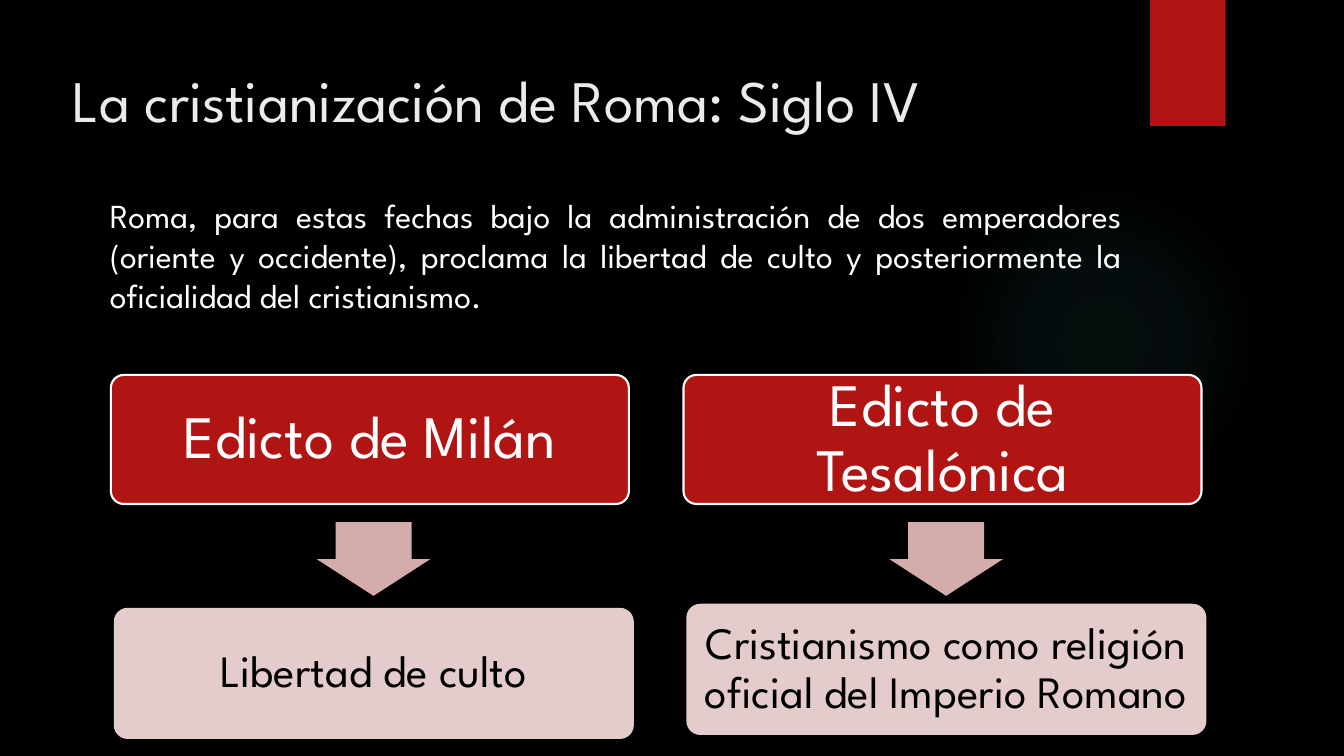
"""Builds the slide on the Christianisation of Rome in the fourth century."""
from dataclasses import dataclass

from lxml import etree
from pptx import Presentation
from pptx.dml.color import RGBColor
from pptx.enum.shapes import MSO_SHAPE
from pptx.enum.text import MSO_ANCHOR, MSO_AUTO_SIZE, PP_ALIGN
from pptx.oxml import parse_xml
from pptx.util import Pt

ROUND, RECT = MSO_SHAPE.ROUNDED_RECTANGLE, MSO_SHAPE.RECTANGLE
OVAL, ARROW = MSO_SHAPE.OVAL, MSO_SHAPE.RIGHT_ARROW
LEFT, CENTER, JUSTIFY = PP_ALIGN.LEFT, PP_ALIGN.CENTER, PP_ALIGN.JUSTIFY
TOP, MIDDLE = MSO_ANCHOR.TOP, MSO_ANCHOR.MIDDLE
NO_FIT = MSO_AUTO_SIZE.NONE

NS = "http://schemas.openxmlformats.org/drawingml/2006/main"
FONT = "League Spartan"
RED, WHITE, BLACK, PINK = "B01513", "FFFFFF", "000000", "E4CCCC"
GLOW_STOPS = ((0, 7), (36, 6), (69, 0))
COLUMN_PITCH = 409


@dataclass
class Style:
    size: float
    color: str
    align: PP_ALIGN
    anchor: MSO_ANCHOR = TOP
    inset_x: float = 7.2
    inset_y: float = 3.6
    spacing: float = 1.0


@dataclass
class Box:
    text: str
    x: float
    y: float
    fill: str
    line: str
    style: Style


EDICT = Style(43, WHITE, CENTER, MIDDLE, 7, 7, 0.9)
EFFECT = Style(32, BLACK, CENTER, MIDDLE, 5.5, 5.5, 0.9)
BOXES = (
    Box("Edicto de Milán", 79.2, 267.8, RED, WHITE, EDICT),
    Box("Libertad de culto", 82, 434.9, PINK, PINK, EFFECT),
    Box("Edicto de Tesalónica", 79.2 + COLUMN_PITCH, 267.8, RED, WHITE, EDICT),
    Box("Cristianismo como religión oficial del Imperio Romano",
        82 + COLUMN_PITCH, 432, PINK, PINK, EFFECT),
)


def rgb(value: str) -> RGBColor:
    """Turn a hex string into a colour."""
    return RGBColor.from_string(value)


def set_all(target, **values) -> None:
    """Set each named attribute on the target."""
    for name, value in values.items():
        setattr(target, name, value)


def write(sp, text: str, style: Style) -> None:
    """Fill a shape with one formatted paragraph."""
    tf = sp.text_frame
    set_all(tf, text=text, word_wrap=True, auto_size=NO_FIT,
            vertical_anchor=style.anchor,
            margin_left=Pt(style.inset_x), margin_right=Pt(style.inset_x),
            margin_top=Pt(style.inset_y), margin_bottom=Pt(style.inset_y))
    p = tf.paragraphs[0]
    set_all(p, alignment=style.align, line_spacing=style.spacing,
            space_before=Pt(0))
    r = p.runs[0]
    set_all(r.font, name=FONT, size=Pt(style.size), bold=False)
    r.font.color.rgb = rgb(style.color)


def place(sp, x: float, y: float, w: float, h: float) -> None:
    """Move and size a shape in points."""
    set_all(sp, left=Pt(x), top=Pt(y), width=Pt(w), height=Pt(h))


def add_shape(s, kind: MSO_SHAPE, x: float, y: float, w: float, h: float,
              fill: str, line: str = ""):
    """Add a flat preset shape with an optional outline."""
    sp = s.shapes.add_shape(kind, Pt(x), Pt(y), Pt(w), Pt(h))
    sp.shadow.inherit = False
    sp.fill.solid()
    sp.fill.fore_color.rgb = rgb(fill)
    if line:
        sp.line.color.rgb = rgb(line)
        sp.line.width = Pt(1.5)
    else:
        sp.line.fill.background()
    return sp


def add_glow(s):
    """Add the faint radial glow."""
    sp = add_shape(s, OVAL, 677.5, 131.8, 221.8, 221.8, BLACK)
    stops = "".join(
        f'<a:gs pos="{pos * 1000}"><a:srgbClr val="50B9C1">'
        f'<a:alpha val="{alpha * 1000}"/></a:srgbClr></a:gs>'
        for pos, alpha in GLOW_STOPS)
    grad = parse_xml(
        f'<a:gradFill xmlns:a="{NS}"><a:gsLst>{stops}</a:gsLst>'
        '<a:path path="circle"><a:fillToRect l="50000" t="50000" '
        'r="50000" b="50000"/></a:path></a:gradFill>')
    solid = sp._element.spPr.find(f"{{{NS}}}solidFill")
    solid.getparent().replace(solid, grad)
    return sp


def main() -> None:
    """Build and save the slide."""
    prs = Presentation()
    set_all(prs, slide_width=Pt(960), slide_height=Pt(540))
    s = prs.slides.add_slide(prs.slide_layouts[1])
    s.background.fill.solid()
    s.background.fill.fore_color.rgb = rgb(BLACK)

    flag = add_shape(s, RECT, 821.5, 0, 54, 90, RED)
    for sp in (flag, add_glow(s)):
        s.shapes._spTree.insert(2, sp._element)

    title, body = s.placeholders
    place(title, 44.6, 41.8, 737.3, 93.6)
    write(title, "La cristianización de Roma: Siglo IV", Style(42, "EBEBEB", LEFT))
    place(body, 71.3, 135.4, 737.3, 318.2)
    write(body, "Roma, para estas fechas bajo la administración de dos "
          "emperadores (oriente y occidente), proclama la libertad de culto y "
          "posteriormente la oficialidad del cristianismo.",
          Style(24, WHITE, JUSTIFY))
    pPr = body.text_frame.paragraphs[0]._p.get_or_add_pPr()
    pPr.set("marL", "0")
    pPr.set("indent", "0")
    etree.SubElement(pPr, f"{{{NS}}}buNone")

    for box in BOXES:
        sp = add_shape(s, ROUND, box.x, box.y, 370, 92.2, box.fill, box.line)
        sp.adjustments[0] = 0.1
        write(sp, box.text, box.style)

    for col in range(2):
        sp = add_shape(s, ARROW, 240.5 + col * COLUMN_PITCH, 358.6, 52.6, 81.4,
                       "D4ACAB")
        sp.rotation = 90
        sp.adjustments[0] = 0.667
        sp.adjustments[1] = 0.5

    prs.save("out.pptx")


if __name__ == "__main__":
    main()
